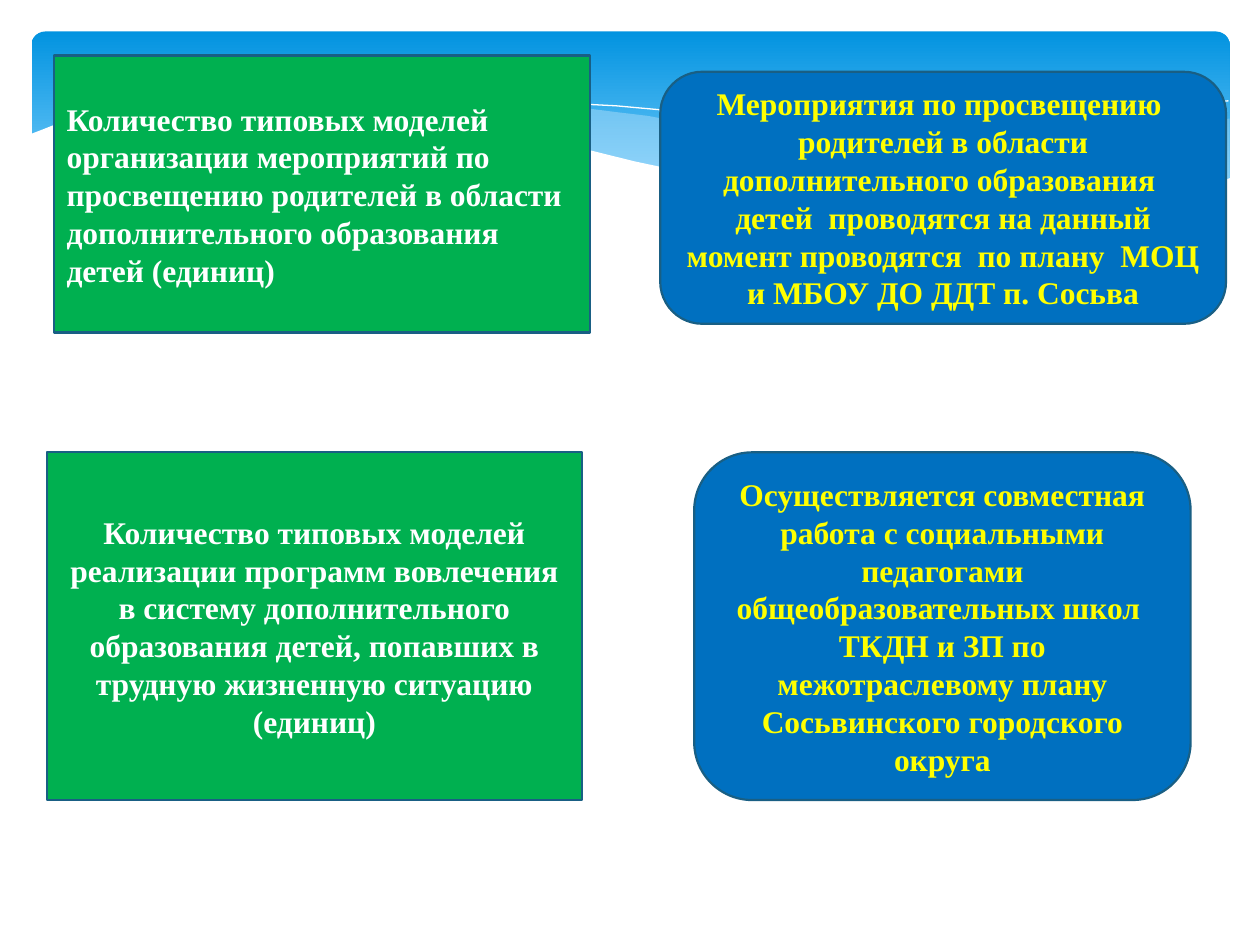
from lxml import etree
from pptx import Presentation
from pptx.dml.color import RGBColor
from pptx.enum.shapes import MSO_SHAPE
from pptx.enum.text import MSO_ANCHOR, PP_ALIGN
from pptx.oxml.ns import qn
from pptx.util import Inches, Pt

RECT, ROUND = MSO_SHAPE.RECTANGLE, MSO_SHAPE.ROUNDED_RECTANGLE
LEFT, CENTER = PP_ALIGN.LEFT, PP_ALIGN.CENTER
MIDDLE = MSO_ANCHOR.MIDDLE

THEME = {
    "font": "Times New Roman",
    "size": Pt(18),
    "edge": Pt(1.25),
    "hair": Pt(0),
    "white": RGBColor.from_string("FFFFFF"),
    "yellow": RGBColor.from_string("FFFF00"),
    "green": RGBColor.from_string("00B050"),
    "blue": RGBColor.from_string("0070C0"),
    "border": RGBColor.from_string("195F84"),
    "sky": RGBColor.from_string("0293E0"),
    "pale": RGBColor.from_string("83D3FE"),
    "mist": RGBColor.from_string("C6E7FC"),
}


def add_wave(points, color, alpha=100, closed=True):
    """Draw a filled outline, or a hairline when it is not closed."""
    (x, y), *rest = points
    pen = shapes.build_freeform(Inches(x), Inches(y))
    pen.add_line_segments([(Inches(a), Inches(b)) for a, b in rest], close=closed)
    wave = pen.convert_to_shape()
    wave.shadow.inherit = False
    if not closed:
        wave.fill.background()
        wave.line.color.rgb = color
        wave.line.width = THEME["hair"]
        return
    wave.line.fill.background()
    wave.fill.solid()
    wave.fill.fore_color.rgb = color
    if alpha < 100:
        tint = wave._element.spPr.find(qn("a:solidFill"))[0]
        etree.SubElement(tint, qn("a:alpha"), val=str(alpha * 1000))


prs = Presentation()
prs.slide_width, prs.slide_height = Inches(10), Inches(7.5)
slide = prs.slides.add_slide(prs.slide_layouts[6])
shapes = slide.shapes

# Header band
band = shapes.add_shape(ROUND, Inches(0.25), Inches(0.25), Inches(9.51), Inches(1.56))
band.adjustments[0] = 0.07
band.shadow.inherit = False
band.line.fill.background()
band.fill.gradient()
band.fill.gradient_angle = 270
for stop, spot, name in zip(band.fill.gradient_stops, (0, 0.9), ("sky", "pale")):
    stop.position = spot
    stop.color.rgb = THEME[name]

# Waves across the band
right_swell = [
    (9.76, 0.94), (9.48, 0.99), (9.21, 1.04), (8.91, 1.1), (8.61, 1.18),
    (8.05, 1.31), (7.53, 1.43), (7.06, 1.52), (6.61, 1.6), (6.91, 1.64),
    (7.19, 1.67), (7.45, 1.69), (7.69, 1.71), (7.92, 1.72), (8.24, 1.72),
    (8.54, 1.7), (8.81, 1.67), (9.05, 1.63), (9.28, 1.58), (9.49, 1.52),
    (9.63, 1.47), (9.76, 1.41),
]
long_swell = [
    (8.93, 1.67), (8.66, 1.64), (8.07, 1.54), (7.41, 1.42), (6.68, 1.26),
    (6.29, 1.16), (5.98, 1.09), (5.69, 1.02), (5.41, 0.97), (5.14, 0.92),
    (4.89, 0.89), (4.42, 0.83), (3.99, 0.8), (3.61, 0.8), (3.28, 0.81),
    (2.86, 0.86), (3.23, 0.9), (3.62, 0.97), (4.04, 1.06), (4.49, 1.16),
    (5.3, 1.35), (5.84, 1.46), (6.18, 1.53), (6.5, 1.58), (6.8, 1.63),
    (7.09, 1.66), (7.36, 1.69), (7.61, 1.71), (7.96, 1.73), (8.28, 1.73),
    (8.57, 1.71),
]
long_line = [
    (3.09, 0.9), (3.28, 0.86), (3.53, 0.84), (3.87, 0.82), (4.16, 0.81),
    (4.5, 0.82), (4.89, 0.84), (5.33, 0.88), (5.82, 0.94), (6.36, 1.03),
    (6.95, 1.14), (7.6, 1.28), (8.31, 1.45), (9.07, 1.66),
]
right_line = [
    (6.13, 1.51), (6.53, 1.41), (6.95, 1.3), (7.48, 1.17), (8.06, 1.04),
    (8.66, 0.93), (8.95, 0.88), (9.24, 0.84), (9.51, 0.82), (9.75, 0.8),
]
front = [
    (9.77, 1.41), (9.59, 1.48), (9.4, 1.54), (9.2, 1.59), (8.99, 1.64),
    (8.75, 1.67), (8.5, 1.7), (8.23, 1.71), (7.93, 1.71), (7.61, 1.7),
    (7.26, 1.67), (6.88, 1.62), (6.48, 1.56), (6.03, 1.49), (5.55, 1.39),
    (5.03, 1.28), (4.47, 1.14), (3.91, 1.02), (3.4, 0.92), (2.92, 0.85),
    (2.5, 0.81), (2.11, 0.78), (1.77, 0.78), (1.46, 0.79), (1.19, 0.82),
    (0.95, 0.85), (0.76, 0.89), (0.59, 0.93), (0.46, 0.98), (0.36, 1.02),
    (0.23, 1.07), (0.23, 2.24), (9.77, 2.24),
]
add_wave(right_swell, THEME["mist"], alpha=29)
add_wave(long_swell, THEME["mist"], alpha=40)
add_wave(long_line, THEME["white"], closed=False)
add_wave(right_line, THEME["white"], closed=False)
add_wave(front, THEME["white"])

# Goals on the left, answers on the right
cards = [
    (RECT, (0.43, 0.44, 4.25, 2.2), "green", "white", LEFT,
     "Количество типовых моделей организации мероприятий по просвещению "
     "родителей в области дополнительного образования детей (единиц)"),
    (RECT, (0.37, 3.59, 4.25, 2.76), "green", "white", CENTER,
     "Количество типовых моделей реализации программ вовлечения в систему "
     "дополнительного образования детей, попавших в трудную жизненную "
     "ситуацию (единиц)"),
    (ROUND, (5.24, 0.57, 4.49, 2), "blue", "yellow", CENTER,
     "Мероприятия по просвещению  родителей в области дополнительного "
     "образования  детей  проводятся на данный момент проводятся  по плану  "
     "МОЦ и МБОУ ДО ДДТ п. Сосьва"),
    (ROUND, (5.51, 3.59, 3.94, 2.76), "blue", "yellow", CENTER,
     "Осуществляется совместная работа с социальными педагогами "
     "общеобразовательных школ  ТКДН и ЗП по межотраслевому плану "
     "Сосьвинского городского округа"),
]
for kind, place, fill, ink, align, text in cards:
    card = shapes.add_shape(kind, *map(Inches, place))
    card.shadow.inherit = False
    card.fill.solid()
    card.fill.fore_color.rgb = THEME[fill]
    card.line.color.rgb = THEME["border"]
    card.line.width = THEME["edge"]
    frame = card.text_frame
    frame.word_wrap = True
    frame.vertical_anchor = MIDDLE
    para = frame.paragraphs[0]
    para.alignment = align
    run = para.add_run()
    run.text = text
    run.font.name = THEME["font"]
    run.font.size = THEME["size"]
    run.font.bold = True
    run.font.color.rgb = THEME[ink]

prs.save("out.pptx")
